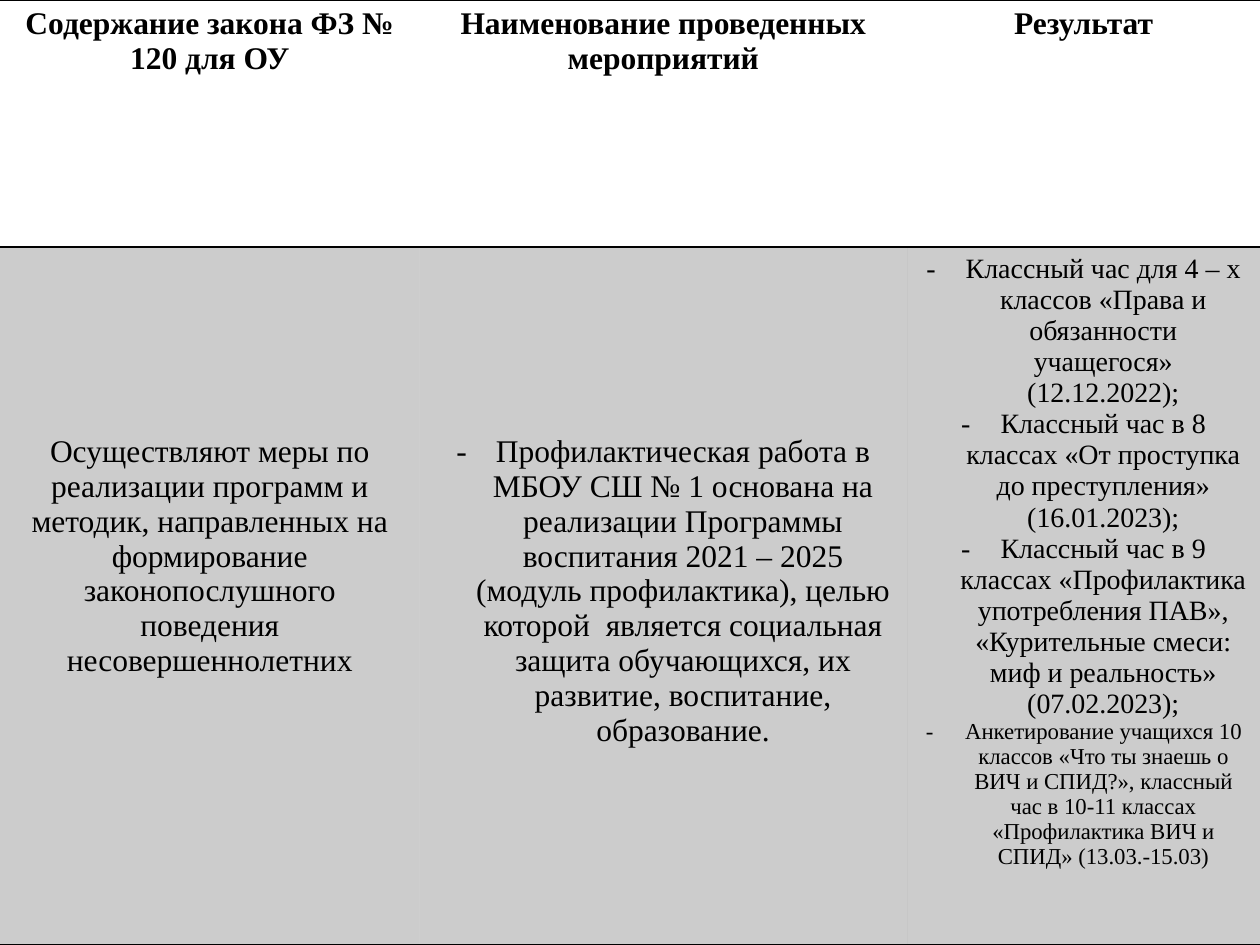
from lxml import etree
from pptx import Presentation
from pptx.dml.color import RGBColor
from pptx.enum import text
from pptx.oxml import ns
from pptx.util import Pt

HEADERS = [
    "Содержание закона ФЗ № 120 для ОУ",
    "Наименование проведенных мероприятий",
    "Результат",
]
DUTY = ("Осуществляют меры по реализации программ и методик, направленных на "
        "формирование законопослушного поведения несовершеннолетних")
MEASURE = ("Профилактическая работа в МБОУ СШ № 1 основана на реализации Программы "
           "воспитания 2021 – 2025 (модуль профилактика), целью которой  является "
           "социальная защита обучающихся, их развитие, воспитание, образование.")
RESULTS = [
    ("Классный час для 4 – х классов «Права и обязанности учащегося» (12.12.2022);", "result"),
    ("Классный час в 8 классах «От проступка до преступления» (16.01.2023);", "result"),
    ("Классный час в 9 классах «Профилактика употребления ПАВ», "
     "«Курительные смеси: миф и реальность» (07.02.2023);", "result"),
    ("Анкетирование учащихся 10 классов «Что ты знаешь о ВИЧ и СПИД?», классный час "
     "в 10-11 классах «Профилактика ВИЧ и СПИД» (13.03.-15.03)", "survey"),
]
THEME = {
    "font": "Times New Roman",
    "ink": "000000",
    "shade_alpha": 20,
    "rule": 1,
    "sizes": {"header": 18, "body": 18, "result": 16, "survey": 13},
}
PAGE_WIDTH, PAGE_HEIGHT = 720, 540
COLUMN_WIDTHS = [239.76, 278.64, 201.6]
HEADER_HEIGHT = 141.12
ROW_HEIGHTS = [HEADER_HEIGHT, PAGE_HEIGHT - HEADER_HEIGHT]
MARGIN = 3.6
LOWERED = MARGIN + 5 * 20.7
HANG = 22.5
PLAIN_STYLE = "{2D5ABB26-0587-4C30-8999-92F81FD0307C}"

BODY = [
    {"lines": [(DUTY, "body")], "bullet": False, "top": LOWERED},
    {"lines": [(MEASURE, "body")], "bullet": True, "top": LOWERED},
    {"lines": RESULTS, "bullet": True, "top": MARGIN},
]
HEADER = [{"lines": [(title, "header")], "bullet": False, "top": MARGIN} for title in HEADERS]


def add_bullet(paragraph):
    properties = paragraph._p.get_or_add_pPr()
    properties.set("marL", str(Pt(HANG)))
    properties.set("indent", str(-Pt(HANG)))
    etree.SubElement(properties, ns.qn("a:buFont")).set("typeface", THEME["font"])
    etree.SubElement(properties, ns.qn("a:buChar")).set("char", "-")


def write_lines(cell, content):
    frame = cell.text_frame
    for index, (words, role) in enumerate(content["lines"]):
        paragraph = frame.add_paragraph() if index else frame.paragraphs[0]
        if content["bullet"]:
            add_bullet(paragraph)
        paragraph.alignment = text.PP_ALIGN.CENTER
        span = paragraph.add_run()
        span.text = words
        font_format = {
            "name": THEME["font"],
            "size": Pt(THEME["sizes"][role]),
            "bold": role == "header",
        }
        for name, value in font_format.items():
            setattr(span.font, name, value)
        span.font.color.rgb = RGBColor.from_string(THEME["ink"])


def shade(cell):
    cell.fill.solid()
    cell.fill.fore_color.rgb = RGBColor.from_string(THEME["ink"])
    color = cell._tc.tcPr.find(".//" + ns.qn("a:srgbClr"))
    etree.SubElement(color, ns.qn("a:alpha")).set("val", str(THEME["shade_alpha"] * 1000))


def draw_borders(cell, ruled):
    properties = cell._tc.get_or_add_tcPr()
    for position, side in enumerate(("lnL", "lnR", "lnT", "lnB")):
        line = etree.Element(ns.qn("a:" + side))
        if side in ruled:
            line.set("w", str(Pt(THEME["rule"])))
            fill = etree.SubElement(line, ns.qn("a:solidFill"))
            etree.SubElement(fill, ns.qn("a:srgbClr")).set("val", THEME["ink"])
        else:
            etree.SubElement(line, ns.qn("a:noFill"))
        properties.insert(position, line)


def build_table(page):
    frame = page.shapes.add_table(2, 3, Pt(0), Pt(0), Pt(PAGE_WIDTH), Pt(PAGE_HEIGHT))
    table = frame.table
    table.first_row = table.horz_banding = False
    table._tbl.tblPr.find(ns.qn("a:tableStyleId")).text = PLAIN_STYLE
    for column, width in zip(table.columns, COLUMN_WIDTHS):
        column.width = Pt(width)
    for row, height, contents in zip(table.rows, ROW_HEIGHTS, (HEADER, BODY)):
        row.height = Pt(height)
        for cell, content in zip(row.cells, contents):
            cell.margin_top = Pt(content["top"])
            write_lines(cell, content)
            if contents is HEADER:
                cell.fill.background()
            else:
                shade(cell)
            draw_borders(cell, ("lnT", "lnB"))


def main():
    deck = Presentation()
    deck.slide_width, deck.slide_height = Pt(PAGE_WIDTH), Pt(PAGE_HEIGHT)
    page = deck.slides.add_slide(deck.slide_layouts[6])
    build_table(page)
    deck.save("out.pptx")


if __name__ == "__main__":
    main()
